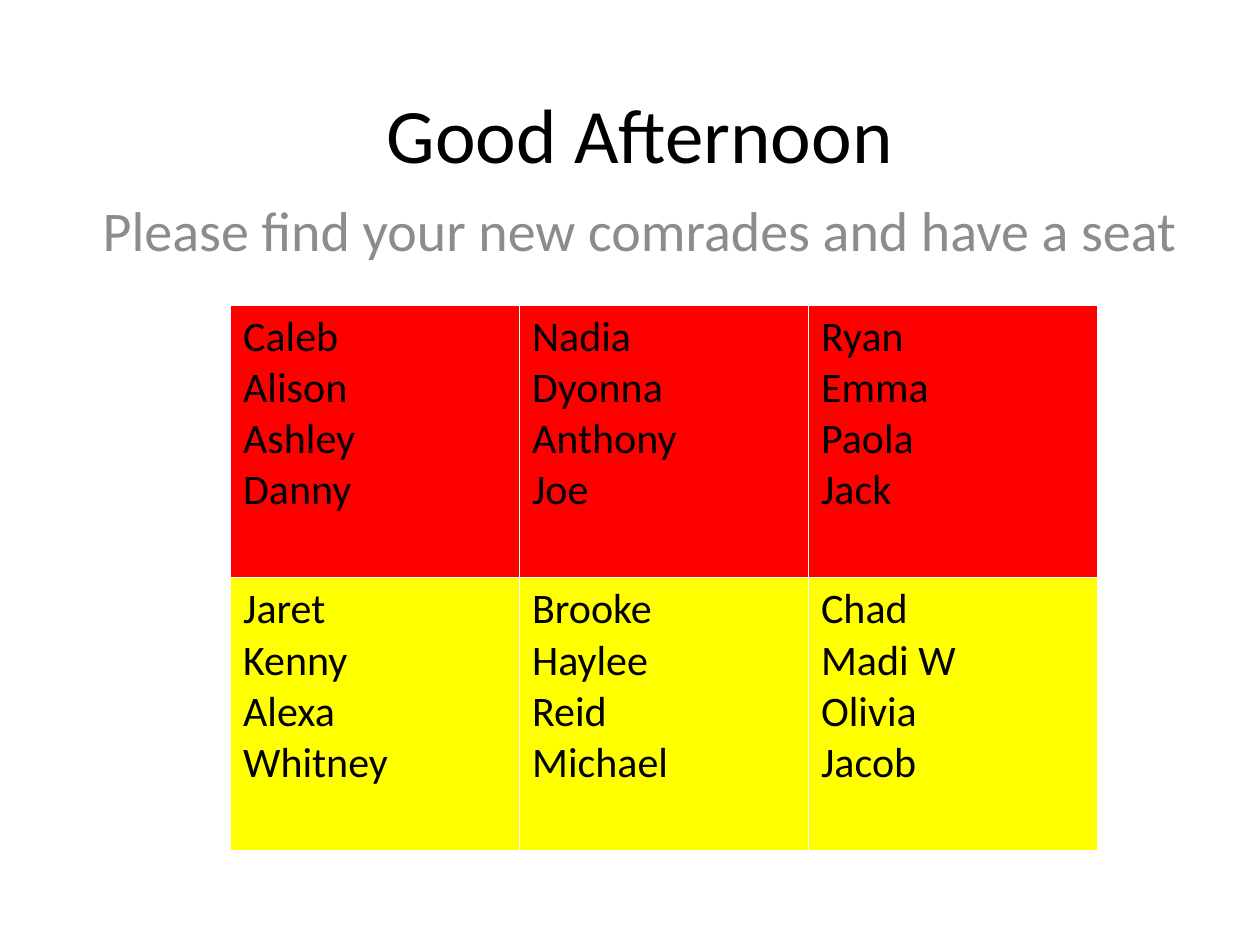
from dataclasses import dataclass

from pptx import Presentation
from pptx.dml.color import RGBColor
from pptx.enum.text import MSO_ANCHOR, PP_ALIGN
from pptx.util import Inches, Pt

CENTER = PP_ALIGN.CENTER
MIDDLE, TOP = MSO_ANCHOR.MIDDLE, MSO_ANCHOR.TOP


@dataclass(frozen=True)
class Theme:
    font: str = "Calibri"
    ink: RGBColor = RGBColor(0x00, 0x00, 0x00)
    muted: RGBColor = RGBColor(0x8C, 0x8C, 0x8C)
    red: RGBColor = RGBColor(0xFF, 0x00, 0x00)
    yellow: RGBColor = RGBColor(0xFF, 0xFF, 0x00)
    title_size: int = 44
    subtitle_size: int = 32
    name_size: int = 24


THEME = Theme()


def add_run(paragraph, text, size, color):
    run = paragraph.add_run()
    run.text = text
    run.font.name = THEME.font
    run.font.size = Pt(size)
    run.font.bold = False
    run.font.color.rgb = color


prs = Presentation()
prs.slide_width, prs.slide_height = Inches(10), Inches(7.5)
slide = prs.slides.add_slide(prs.slide_layouts[0])

# Greeting and instruction
greeting, instruction = slide.placeholders
headings = [
    (greeting, "Good Afternoon", (0.83, 0.25, 8.5, 1.61), MIDDLE,
     THEME.title_size, THEME.ink),
    (instruction, "Please find your new comrades and have a seat",
     (0.33, 1.5, 9.5, 0.67), TOP, THEME.subtitle_size, THEME.muted),
]
for heading, text, box, anchor, size, color in headings:
    heading.left, heading.top, heading.width, heading.height = map(Inches, box)
    heading.text_frame.vertical_anchor = anchor
    paragraph = heading.text_frame.paragraphs[0]
    paragraph.alignment = CENTER
    add_run(paragraph, text, size, color)

# Seating groups: one table row per colour, one cell per group
seating = [
    (THEME.red, [
        ["Caleb", "Alison", "Ashley", "Danny"],
        ["Nadia", "Dyonna", "Anthony", "Joe"],
        ["Ryan", "Emma", "Paola", "Jack"],
    ]),
    (THEME.yellow, [
        ["Jaret", "Kenny", "Alexa", "Whitney"],
        ["Brooke", "Haylee", "Reid", "Michael"],
        ["Chad", "Madi W", "Olivia", "Jacob"],
    ]),
]
# The default table style supplies the white rules between the cells
seating_table = slide.shapes.add_table(
    len(seating), len(seating[0][1]),
    Inches(1.83), Inches(2.42), Inches(6.88), Inches(4.33)).table
seating_table.horz_banding = False

for row, (color, groups) in enumerate(seating):
    for column, names in enumerate(groups):
        cell = seating_table.cell(row, column)
        cell.fill.solid()
        cell.fill.fore_color.rgb = color
        for index, name in enumerate(names):
            frame = cell.text_frame
            paragraph = frame.add_paragraph() if index else frame.paragraphs[0]
            add_run(paragraph, name, THEME.name_size, THEME.ink)

prs.save("out.pptx")
